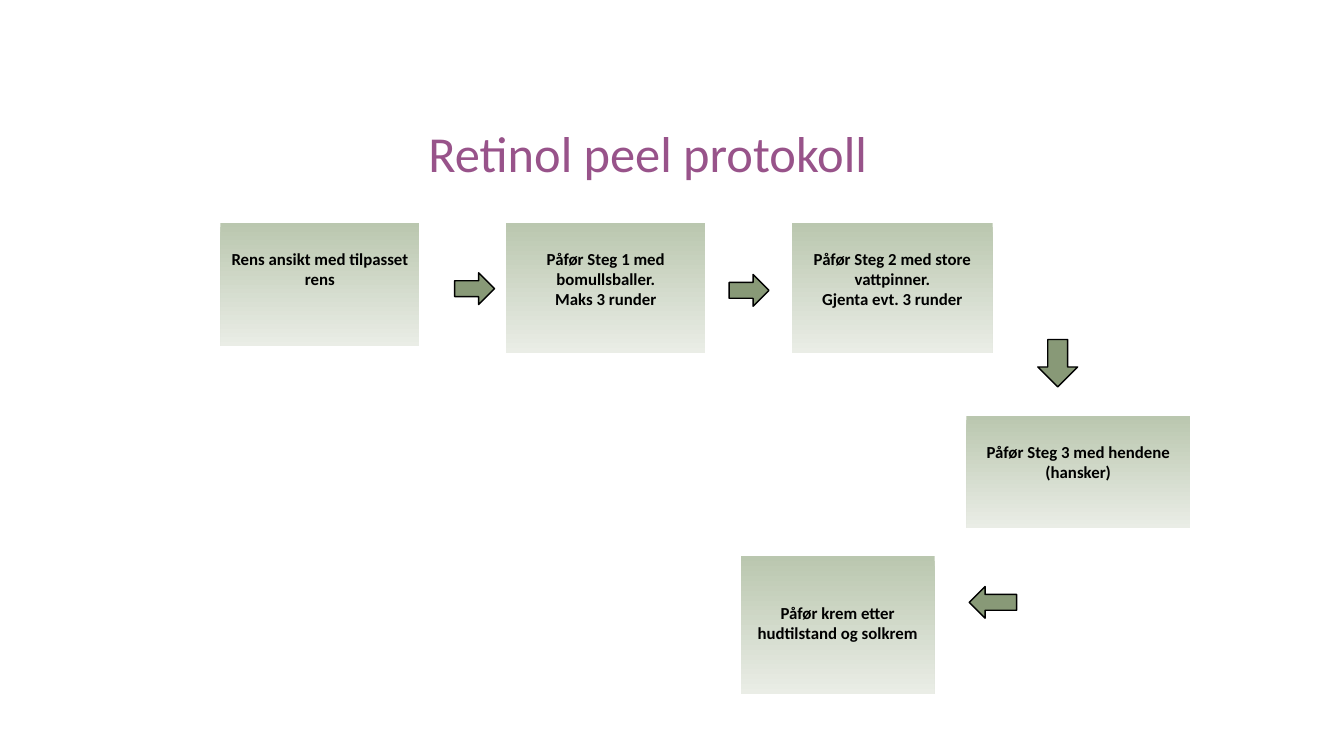
from dataclasses import dataclass

from pptx import Presentation
from pptx.dml.color import RGBColor
from pptx.enum.shapes import MSO_SHAPE
from pptx.enum.text import MSO_ANCHOR, PP_ALIGN
from pptx.util import Inches, Pt

RECTANGLE = MSO_SHAPE.RECTANGLE
RIGHT = MSO_SHAPE.RIGHT_ARROW
DOWN = MSO_SHAPE.DOWN_ARROW
TOP = MSO_ANCHOR.TOP
CENTER = PP_ALIGN.CENTER


@dataclass(frozen=True)
class Theme:
    font: str = "Calibri"
    title_size: int = 72
    step_size: int = 24
    title: str = "98538A"
    text: str = "000000"
    box_top: str = "BAC7AF"
    box_bottom: str = "EAEDE6"
    arrow: str = "889977"
    outline: str = "000000"
    outline_width: int = 2


THEME = Theme()
TITLE = "Retinol peel protokoll"

STEPS = [
    (0, 0, 3.95, 2.45, 1, ["Rens ansikt med tilpasset rens"]),
    (1, 0, 3.95, 2.58, 1, ["Påfør Steg 1 med bomullsballer.", "Maks 3 runder"]),
    (2, 0, 3.98, 2.58, 1, ["Påfør Steg 2 med store vattpinner.", "Gjenta evt. 3 runder"]),
    (2.61, 1.16, 4.44, 2.22, 1, ["Påfør Steg 3 med hendene", "(hansker)"]),
    (1.82, 2, 3.85, 2.73, 2, ["Påfør krem etter hudtilstand og solkrem"]),
]
ARROWS = [
    (0.82, 0.3, 0.79, 0.63, RIGHT, 0),
    (1.78, 0.31, 0.79, 0.63, RIGHT, 0),
    (2.86, 0.7, 0.79, 0.94, DOWN, 0),
    (2.62, 2.18, 0.94, 0.63, RIGHT, 180),
]

SLIDE_WIDTH, SLIDE_HEIGHT = 26.66, 15
GRID_LEFT, GRID_TOP = 4.37, 4.42
COLUMN_PITCH, ROW_PITCH = 5.67, 3.31
SIDE_INSET, TOP_INSET = 0.2, 0.1
LINE_HEIGHT = THEME.step_size * 1.22 / 72


def color(value):
    return RGBColor.from_string(value)


def place(column, row, width, height):
    left = GRID_LEFT + column * COLUMN_PITCH
    top = GRID_TOP + row * ROW_PITCH
    return [Inches(length) for length in (left, top, width, height)]


def write(box, lines, size, ink, bold=False, skipped=0):
    frame = box.text_frame
    frame.word_wrap = True
    frame.vertical_anchor = TOP
    frame.margin_left = frame.margin_right = Inches(SIDE_INSET)
    frame.margin_top = Inches(TOP_INSET + skipped * LINE_HEIGHT)
    frame.margin_bottom = Inches(TOP_INSET)
    for index, line in enumerate(lines):
        para = frame.add_paragraph() if index else frame.paragraphs[0]
        para.alignment = CENTER
        span = para.add_run()
        span.text = line
        span.font.name = THEME.font
        span.font.size = Pt(size)
        span.font.bold = bold
        span.font.color.rgb = color(ink)


def add_step(page, column, row, width, height, skipped, lines):
    box = page.shapes.add_shape(RECTANGLE, *place(column, row, width, height))
    box.shadow.inherit = False
    box.line.fill.background()
    box.fill.gradient()
    box.fill.gradient_angle = 270
    for stop, shade in zip(box.fill.gradient_stops, (THEME.box_top, THEME.box_bottom)):
        stop.color.rgb = color(shade)
    write(box, lines, THEME.step_size, THEME.text, True, skipped)


def add_arrow(page, column, row, width, height, kind, rotation):
    arrow = page.shapes.add_shape(kind, *place(column, row, width, height))
    arrow.shadow.inherit = False
    arrow.rotation = rotation
    arrow.fill.solid()
    arrow.fill.fore_color.rgb = color(THEME.arrow)
    arrow.line.color.rgb = color(THEME.outline)
    arrow.line.width = Pt(THEME.outline_width)


def main():
    deck = Presentation()
    deck.slide_width = Inches(SLIDE_WIDTH)
    deck.slide_height = Inches(SLIDE_HEIGHT)
    page = deck.slides.add_slide(deck.slide_layouts[6])
    title = page.shapes.add_textbox(Inches(3.85), Inches(2.33), Inches(18), Inches(1.45))
    write(title, [TITLE], THEME.title_size, THEME.title)
    for step in STEPS:
        add_step(page, *step)
    for arrow in ARROWS:
        add_arrow(page, *arrow)
    deck.save("out.pptx")


if __name__ == "__main__":
    main()
